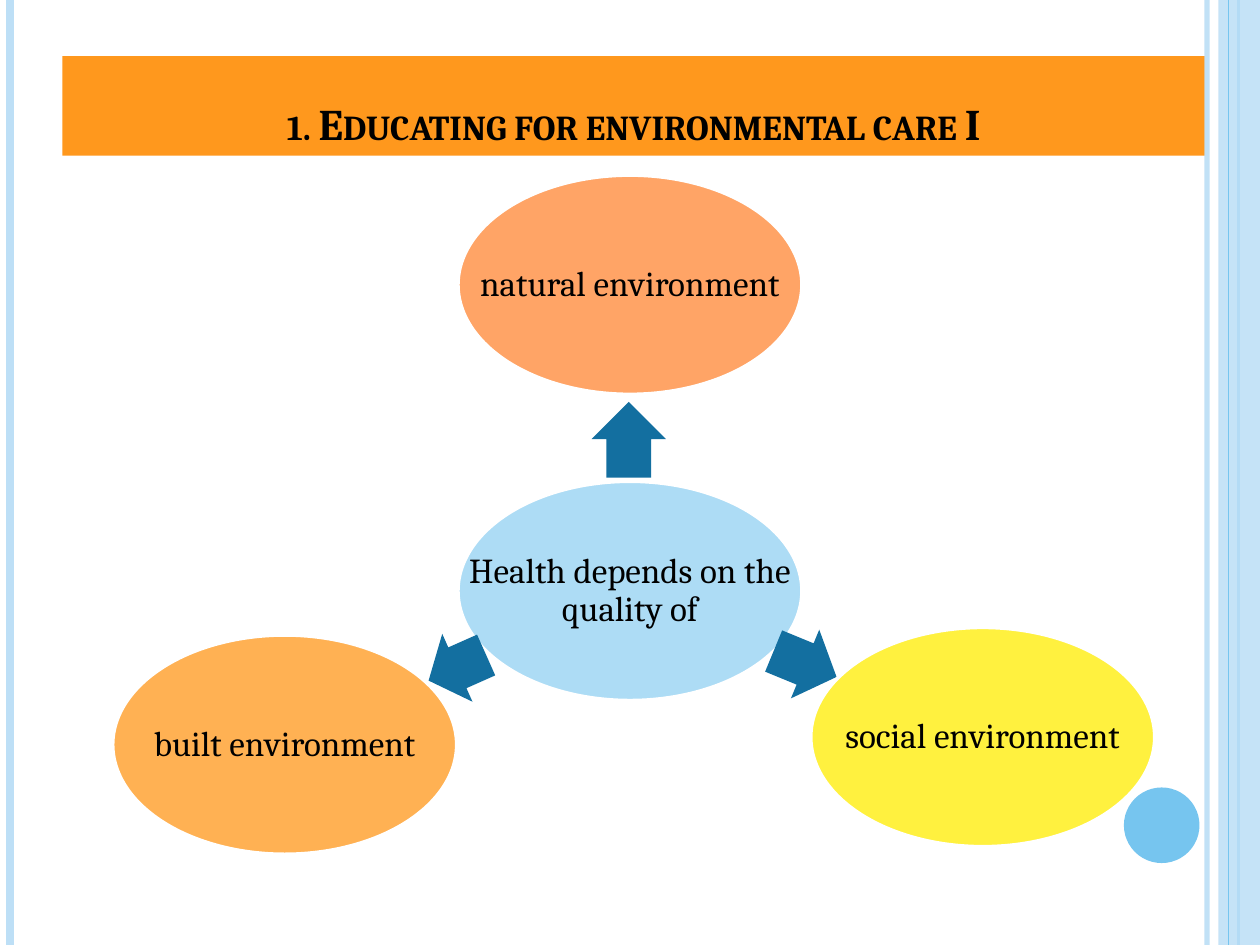
"""Build a slide on environmental care: one hub with arrows to three ovals."""
from dataclasses import dataclass

from lxml import etree
from pptx import Presentation
from pptx.dml.color import RGBColor
from pptx.enum.shapes import MSO_CONNECTOR, MSO_SHAPE
from pptx.enum.text import MSO_ANCHOR, MSO_AUTO_SIZE, PP_ALIGN
from pptx.oxml.ns import qn
from pptx.util import Inches, Pt

LINE = MSO_CONNECTOR.STRAIGHT
RECT, OVAL, ARROW = MSO_SHAPE.RECTANGLE, MSO_SHAPE.OVAL, MSO_SHAPE.RIGHT_ARROW
MID, LOW = MSO_ANCHOR.MIDDLE, MSO_ANCHOR.BOTTOM
CENTER, FIXED = PP_ALIGN.CENTER, MSO_AUTO_SIZE.NONE


@dataclass(frozen=True)
class Theme:
    font: str = "Cambria"
    ink: str = "000000"
    edge: str = "FFFFFF"
    banner: str = "FF981D"
    arrow: str = "136FA0"
    pale: str = "BDDFF6"
    sky: str = "76C5EF"
    title: int = 25
    body: int = 20


THEME = Theme()
WIDE, HIGH = 10, 7.5
OVAL_W, OVAL_H = 2.73, 1.74
ARROW_H = 0.59
PAD = 0.03

TITLE = "1. Educating for environmental care I"
HUB = ("Health depends on the quality of", (5, 4.69), "ADDCF5")
SPOKES = [
    ("natural environment", (5, 2.26), "FFA466", (4.99, 3.49), 0.6, 270),
    ("social environment", (7.8, 5.85), "FFF13F", (6.39, 5.27), 0.54, 22.4),
    ("built environment", (2.26, 5.91), "FFB153", (3.63, 5.3), 0.5, 156),
]
BARS = [
    (9.58, THEME.pale, 3, 93),
    (0.08, THEME.pale, 4.5, 100),
    (9.83, THEME.sky, 1.5, 100),
]
SEAM = (9.75, THEME.sky, 0.75, 100)
STRIP = 0.33
DOT = ((9.22, 6.55), 0.6)


def fade(part, share):
    if share < 100:
        tint = next(part.iter(qn("a:srgbClr")))
        etree.SubElement(tint, qn("a:alpha"), val=str(share * 1000))


def frame(mid, wide, high):
    x, y = mid
    return [Inches(n) for n in (x - wide / 2, y - high / 2, wide, high)]


def add_bar(shapes, x, color, width, share):
    bar = shapes.add_connector(LINE, Inches(x), 0, Inches(x), Inches(HIGH))
    bar.line.color.rgb = RGBColor.from_string(color)
    bar.line.width = Pt(width)
    fade(bar.line.color._xFill, share)
    etree.SubElement(bar._element.spPr, qn("a:effectLst"))


def add_form(shapes, kind, mid, wide, high, color):
    form = shapes.add_shape(kind, *frame(mid, wide, high))
    form.shadow.inherit = False
    form.fill.solid()
    form.fill.fore_color.rgb = RGBColor.from_string(color)
    form.line.fill.background()
    return form


def style(para, size):
    para.alignment = CENTER
    para.font.name = THEME.font
    para.font.size = Pt(size)
    para.font.color.rgb = RGBColor.from_string(THEME.ink)


def add_node(shapes, text, mid, color):
    oval = add_form(shapes, OVAL, mid, OVAL_W, OVAL_H, color)
    oval.line.color.rgb = RGBColor.from_string(THEME.edge)
    oval.line.width = Pt(2)
    body = shapes.add_textbox(*frame(mid, OVAL_W, OVAL_H)).text_frame
    body.word_wrap = True
    body.vertical_anchor = MID
    body.margin_left = body.margin_right = Inches(PAD)
    body.margin_top = body.margin_bottom = Inches(PAD)
    body.text = text
    para = body.paragraphs[0]
    para.line_spacing = 0.9
    style(para, THEME.body)


def add_title(title):
    title.left, title.top, title.width, title.height = frame((5.03, 0.84), 9.07, 0.79)
    title.fill.solid()
    title.fill.fore_color.rgb = RGBColor.from_string(THEME.banner)
    body = title.text_frame
    body.auto_size = FIXED
    body.vertical_anchor = LOW
    body.text = TITLE
    para = body.paragraphs[0]
    style(para, THEME.title)
    para.font.bold = True
    para.runs[0]._r.get_or_add_rPr().set("cap", "small")


def main():
    deck = Presentation()
    deck.slide_width, deck.slide_height = Inches(WIDE), Inches(HIGH)
    slide = deck.slides.add_slide(deck.slide_layouts[5])
    shapes = slide.shapes
    for bar in BARS:
        add_bar(shapes, *bar)
    strip = add_form(shapes, RECT, (WIDE - STRIP / 2, HIGH / 2), STRIP, HIGH, THEME.pale)
    fade(strip._element.spPr, 87)
    add_bar(shapes, *SEAM)
    spot, size = DOT
    add_form(shapes, OVAL, spot, size, size, THEME.sky)
    add_title(shapes.title)
    add_node(shapes, *HUB)
    for text, mid, color, place, length, turn in SPOKES:
        arrow = add_form(shapes, ARROW, place, length, ARROW_H, THEME.arrow)
        arrow.adjustments[0] = 0.6
        arrow.rotation = turn
        add_node(shapes, text, mid, color)
    deck.save("out.pptx")


if __name__ == "__main__":
    main()
